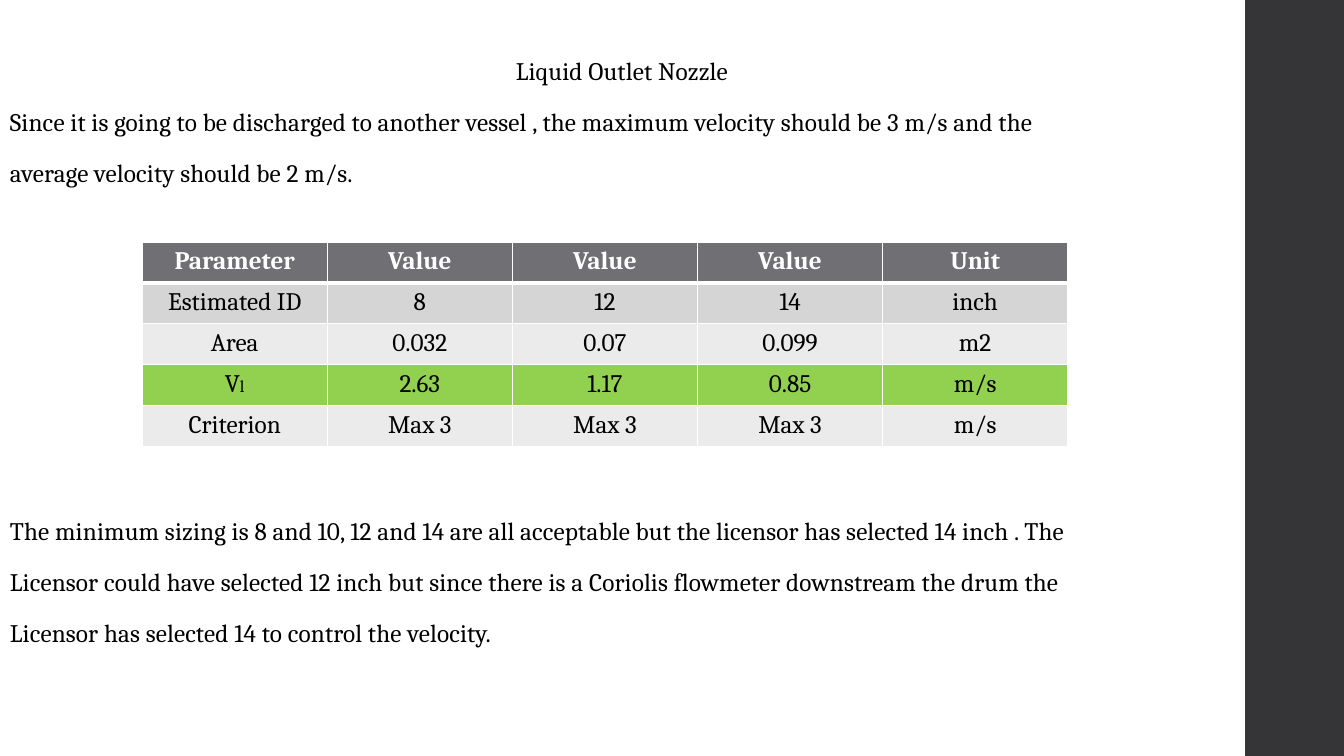
from lxml.etree import SubElement
from pptx import Presentation
from pptx.dml.color import RGBColor
from pptx.enum.shapes import MSO_SHAPE as SHAPE
from pptx.enum.text import PP_ALIGN as ALIGN
from pptx.oxml import parse_xml
from pptx.oxml.ns import nsdecls, qn
from pptx.util import Inches, Pt

INTRO = [
    "Since it is going to be discharged to another vessel , the maximum velocity should be 3 m/s and the",
    "average velocity should be 2 m/s.",
]
CONCLUSION = [
    "The minimum sizing is 8 and 10, 12 and 14 are all acceptable but the licensor has selected 14 inch . The",
    "Licensor could have selected 12 inch but since there is a Coriolis flowmeter downstream the drum the",
    "Licensor has selected 14 to control the velocity.",
]
# A cell is a list of (text, size) runs when its sizes differ.
NOZZLES = [
    ["Parameter", "Value", "Value", "Value", "Unit"],
    ["Estimated ID", "8", "12", "14", "inch"],
    ["Area", "0.032", "0.07", "0.099", "m2"],
    [[("V", 18), ("l", 12)], "2.63", "1.17", "0.85", "m/s"],
    ["Criterion", "Max 3", "Max 3", "Max 3", "m/s"],
]
ROW_FILLS = ["6F6F74", "D5D5D6", "EBEBEB", "92D050", "EBEBEB"]


def color(value):
    return RGBColor.from_string(value)


def paint(fill, value):
    fill.solid()
    fill.fore_color.rgb = color(value)


def set_all(obj, values):
    for name, value in values.items():
        setattr(obj, name, value)


class Deck:
    """Style and current slide; lengths are percent of the slide's size."""

    FONT = "Cambria"
    SIZE = 18
    LINE = {"line_spacing": 0.95, "space_before": Pt(14), "space_after": Pt(2)}
    FRAME = {"word_wrap": True, "margin_top": 0, "margin_bottom": 0}

    def __init__(self, width, height):
        self.prs = Presentation()
        set_all(self.prs, {"slide_width": Inches(width), "slide_height": Inches(height)})
        self.s = self.prs.slides.add_slide(self.prs.slide_layouts[6])
        paint(self.s.background.fill, "FFFFFF")

    def box(self, x, y, w, h):
        sizes = (self.prs.slide_width, self.prs.slide_height) * 2
        return [round(size * share / 100) for size, share in zip(sizes, (x, y, w, h))]

    def run(self, p, text, size=SIZE, ink="000000", bold=False):
        r = p.add_run()
        r.text = text
        set_all(r.font, {"name": self.FONT, "size": Pt(size), "bold": bold})
        r.font.color.rgb = color(ink)
        return r

    def bar(self, *place, fill):
        sp = self.s.shapes.add_shape(SHAPE.RECTANGLE, *self.box(*place))
        sp.shadow.inherit = False
        paint(sp.fill, fill)
        sp.line.fill.background()

    def text(self, *place, lines, title=None):
        tf = self.s.shapes.add_textbox(*self.box(*place)).text_frame
        set_all(tf, self.FRAME)
        for i, line in enumerate([title] + lines if title else lines):
            p = tf.add_paragraph() if i else tf.paragraphs[0]
            set_all(p, self.LINE)
            if not i:
                p.space_before = Pt(0)
            p.alignment = ALIGN.CENTER if line is title else ALIGN.LEFT
            r = self.run(p, line)
            r._r.get_or_add_rPr().set("spc", "10")

    def borders(self, cell, widths, ink="FFFFFF"):
        """Draw the edges of a cell, widths in points by side letter."""
        tc_pr = cell._tc.get_or_add_tcPr()
        for i, (side, width) in enumerate(widths.items()):
            ln = parse_xml(f'<a:ln{side} {nsdecls("a")} w="{Pt(width)}"/>')
            SubElement(SubElement(ln, qn("a:solidFill")), qn("a:srgbClr"), val=ink)
            tc_pr.insert(i, ln)

    def table(self, *place, rows, fills):
        x, y, w, h = self.box(*place)
        table = self.s.shapes.add_table(len(rows), len(rows[0]), x, y, w, h).table
        for i, (row, fill) in enumerate(zip(rows, fills)):
            head = i == 0
            look = {"ink": "FFFFFF" if head else "000000", "bold": head}
            edges = {"L": 1, "R": 1, "T": 3 if i == 1 else 1, "B": 3 if head else 1}
            for j, content in enumerate(row):
                cell = table.cell(i, j)
                paint(cell.fill, fill)
                self.borders(cell, edges)
                p = cell.text_frame.paragraphs[0]
                p.alignment = ALIGN.CENTER
                runs = [(content, self.SIZE)] if isinstance(content, str) else content
                for text, size in runs:
                    self.run(p, text, size, **look)


def main():
    deck = Deck(13.33, 7.5)
    deck.bar(92.65, 0, 7.35, 100, fill="353537")
    deck.text(0, 7.6, 92.57, 19, title="Liquid Outlet Nozzle", lines=INTRO)
    deck.table(10.58, 32, 68.87, 27.07, rows=NOZZLES, fills=ROW_FILLS)
    deck.text(0, 68.4, 92.57, 19, lines=CONCLUSION)
    deck.prs.save("out.pptx")


if __name__ == "__main__":
    main()
